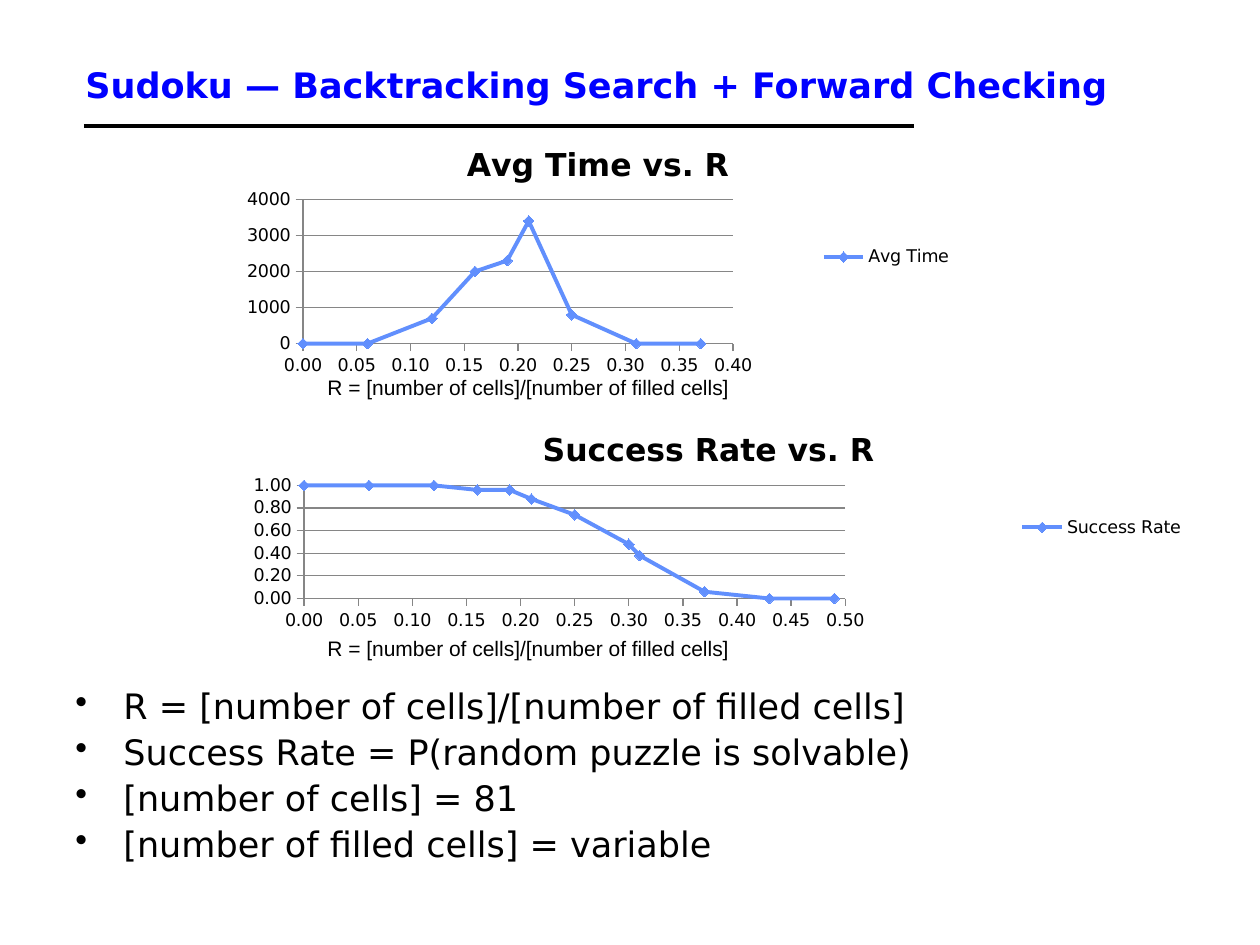
"""Build the Sudoku slide with two scatter charts, their captions and a bullet list."""
from dataclasses import dataclass

import pptx
import pptx.chart.data
import pptx.dml.color
import pptx.enum.chart
import pptx.enum.shapes
import pptx.enum.text
import pptx.oxml
import pptx.util
from lxml import etree

EMU_PER_PX = 914400 / 126
RATIO = "R = [number of cells]/[number of filled cells]"


@dataclass(frozen=True)
class Theme:
    title: str = "0000FF"
    text: str = "000000"
    series: str = "618FFD"
    grid: str = "868686"
    font: str = "DejaVu Sans"
    caption_font: str = "Arial"
    heading_pt: int = 20
    chart_title_pt: int = 18
    caption_pt: int = 12
    chart_pt: int = 10


@dataclass(frozen=True)
class Box:
    x: int
    y: int
    w: int
    h: int

    def emu(self) -> tuple:
        return tuple(px(v) for v in (self.x, self.y, self.w, self.h))


@dataclass(frozen=True)
class Plot:
    box: Box
    caption: Box
    title: str
    name: str
    points: tuple
    x_max: float
    y_max: float
    y_step: float
    y_format: str
    layout: tuple


T = Theme()
PLOTS = (
    Plot(Box(231, 126, 734, 262), Box(315, 368, 431, 38), "Avg Time vs. R", "Avg Time",
         ((0, 0), (0.06, 0), (0.12, 700), (0.16, 2000), (0.19, 2300), (0.21, 3400),
          (0.25, 800), (0.31, 0), (0.37, 0)),
         0.4, 4000, 1000, "General", (0.098, 0.28, 0.586, 0.551)),
    Plot(Box(220, 412, 977, 231), Box(315, 629, 431, 38), "Success Rate vs. R", "Success Rate",
         ((0, 1), (0.06, 1), (0.12, 1), (0.16, 0.96), (0.19, 0.96), (0.21, 0.88),
          (0.25, 0.74), (0.3, 0.48), (0.31, 0.38), (0.37, 0.06), (0.43, 0), (0.49, 0)),
         0.5, 1, 0.2, "#,##0.00", (0.086, 0.318, 0.554, 0.49)),
)
BULLETS = (
    RATIO,
    "Success Rate = P(random puzzle is solvable)",
    "[number of cells] = 81",
    "[number of filled cells] = variable",
)


def px(value: int) -> int:
    return round(value * EMU_PER_PX)


def rgb(value: str) -> pptx.dml.color.RGBColor:
    return pptx.dml.color.RGBColor.from_string(value)


def style_font(font, size: int, color: str = T.text, name: str = T.font,
               bold: bool = False) -> None:
    font.size = pptx.util.Pt(size)
    font.name = name
    font.bold = bold
    font.color.rgb = rgb(color)


def add_text(s, box: Box, lines: tuple, size: int, color: str = T.text, name: str = T.font,
             bold: bool = False, middle: bool = False, bullets: bool = False) -> None:
    tf = s.shapes.add_textbox(*box.emu()).text_frame
    tf.word_wrap = True
    if middle:
        tf.vertical_anchor = pptx.enum.text.MSO_ANCHOR.MIDDLE
    for i, line in enumerate(lines):
        p = tf.paragraphs[0] if i == 0 else tf.add_paragraph()
        r = p.add_run()
        r.text = line
        style_font(r.font, size, color, name, bold)
        if bullets:
            p.line_spacing = 0.9
            p.space_before = pptx.util.Pt(4.7)
            pPr = p._p.get_or_add_pPr()
            pPr.set("marL", str(px(48)))
            pPr.set("indent", str(-px(48)))
            etree.SubElement(pPr, pptx.oxml.ns.qn("a:buChar")).set("char", "•")


def add_rule(s, x1: int, x2: int, y: int) -> None:
    sp = s.shapes.add_connector(pptx.enum.shapes.MSO_CONNECTOR.STRAIGHT,
                                px(x1), px(y), px(x2), px(y))
    sp.line.color.rgb = rgb(T.text)
    sp.line.width = pptx.util.Pt(2.25)
    etree.SubElement(sp._element.spPr, pptx.oxml.ns.qn("a:effectLst"))


def style_axis(axis, maximum: float, step: float, number_format: str, grid: bool) -> None:
    axis.minimum_scale = 0
    axis.maximum_scale = maximum
    axis.major_unit = step
    axis.major_tick_mark = pptx.enum.chart.XL_TICK_MARK.OUTSIDE
    axis.has_major_gridlines = grid
    axis.tick_labels.number_format = number_format
    axis.tick_labels.number_format_is_linked = False
    axis.format.line.color.rgb = rgb(T.grid)
    if grid:
        axis.major_gridlines.format.line.color.rgb = rgb(T.grid)


def set_layout(chart, values: tuple) -> None:
    qn = pptx.oxml.ns.qn
    area = chart._chartSpace.chart.plotArea
    for old in area.findall(qn("c:layout")):
        area.remove(old)
    layout = etree.Element(qn("c:layout"))
    area.insert(0, layout)
    manual = etree.SubElement(layout, qn("c:manualLayout"))
    settings = (("layoutTarget", "inner"), ("xMode", "edge"), ("yMode", "edge"),
                *zip("xywh", values))
    for tag, value in settings:
        etree.SubElement(manual, qn(f"c:{tag}")).set("val", str(value))


def add_plot(s, plot: Plot) -> None:
    data = pptx.chart.data.XyChartData()
    series = data.add_series(plot.name)
    for x, y in plot.points:
        series.add_data_point(x, y)
    chart = s.shapes.add_chart(pptx.enum.chart.XL_CHART_TYPE.XY_SCATTER_LINES,
                               *plot.box.emu(), data).chart
    style_font(chart.font, T.chart_pt)
    chart.has_title = True
    r = chart.chart_title.text_frame.paragraphs[0].add_run()
    r.text = plot.title
    style_font(r.font, T.chart_title_pt, bold=True)
    chart.has_legend = True
    chart.legend.position = pptx.enum.chart.XL_LEGEND_POSITION.RIGHT
    chart.legend.include_in_layout = False
    style_axis(chart.category_axis, plot.x_max, 0.05, "#,##0.00", False)
    style_axis(chart.value_axis, plot.y_max, plot.y_step, plot.y_format, True)
    chart.plots[0].vary_by_categories = False
    line = chart.plots[0].series[0]
    line.smooth = False
    line.format.line.color.rgb = rgb(T.series)
    line.format.line.width = pptx.util.Pt(2.25)
    line.marker.style = pptx.enum.chart.XL_MARKER_STYLE.DIAMOND
    line.marker.size = 6
    line.marker.format.fill.solid()
    line.marker.format.fill.fore_color.rgb = rgb(T.series)
    line.marker.format.line.color.rgb = rgb(T.series)
    set_layout(chart, plot.layout)


def main() -> None:
    prs = pptx.Presentation()
    prs.slide_width, prs.slide_height = px(1260), px(945)
    s = prs.slides.add_slide(prs.slide_layouts[6])
    add_rule(s, 84, 914, 126)
    add_text(s, Box(73, 42, 1071, 84), ("Sudoku — Backtracking Search + Forward Checking",),
             T.heading_pt, T.title, bold=True, middle=True)
    add_text(s, Box(63, 683, 1134, 199), BULLETS, T.heading_pt, bullets=True)
    for plot in PLOTS:
        add_plot(s, plot)
    for plot in PLOTS:
        add_text(s, plot.caption, (RATIO,), T.caption_pt, name=T.caption_font)
    prs.save("out.pptx")


if __name__ == "__main__":
    main()
